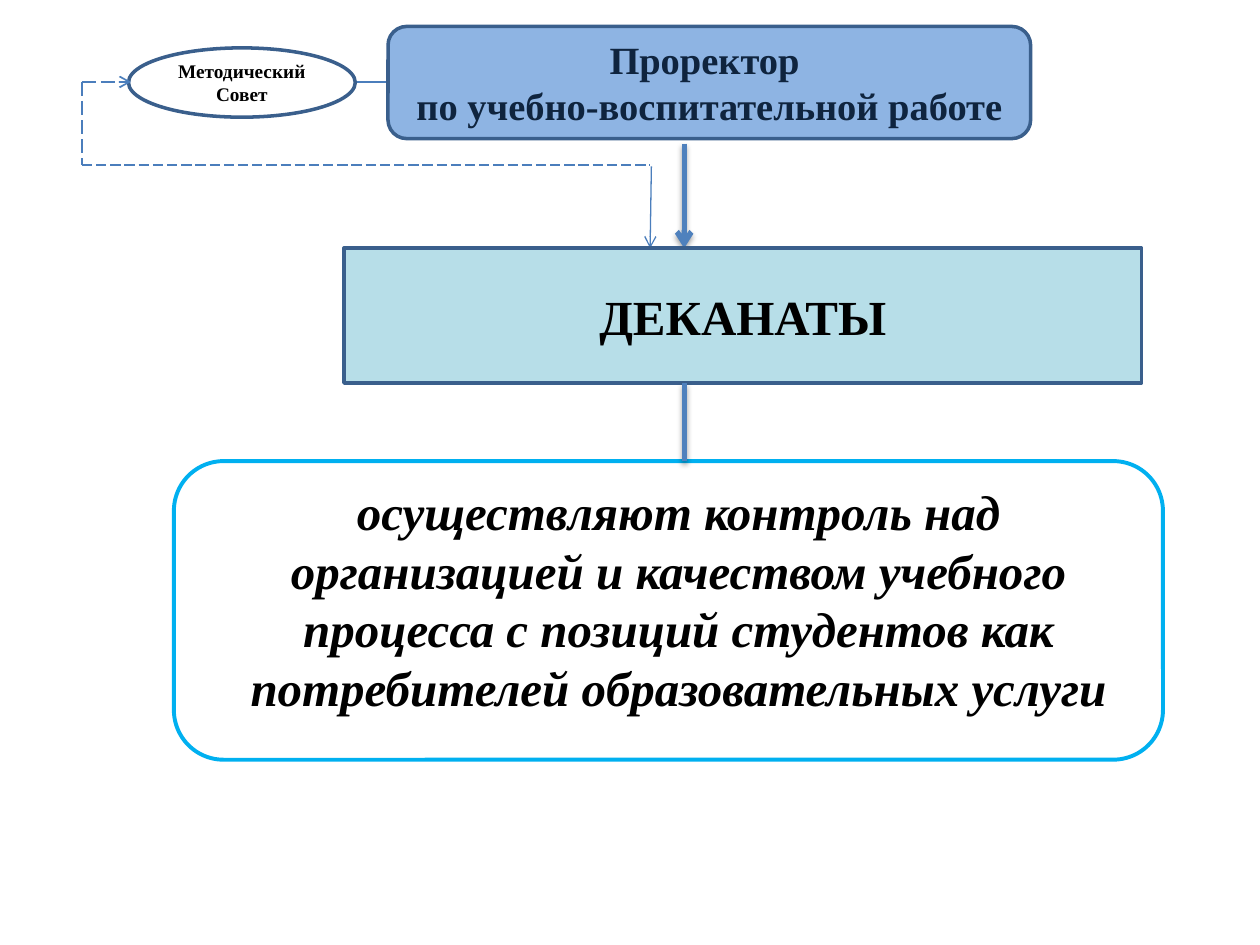
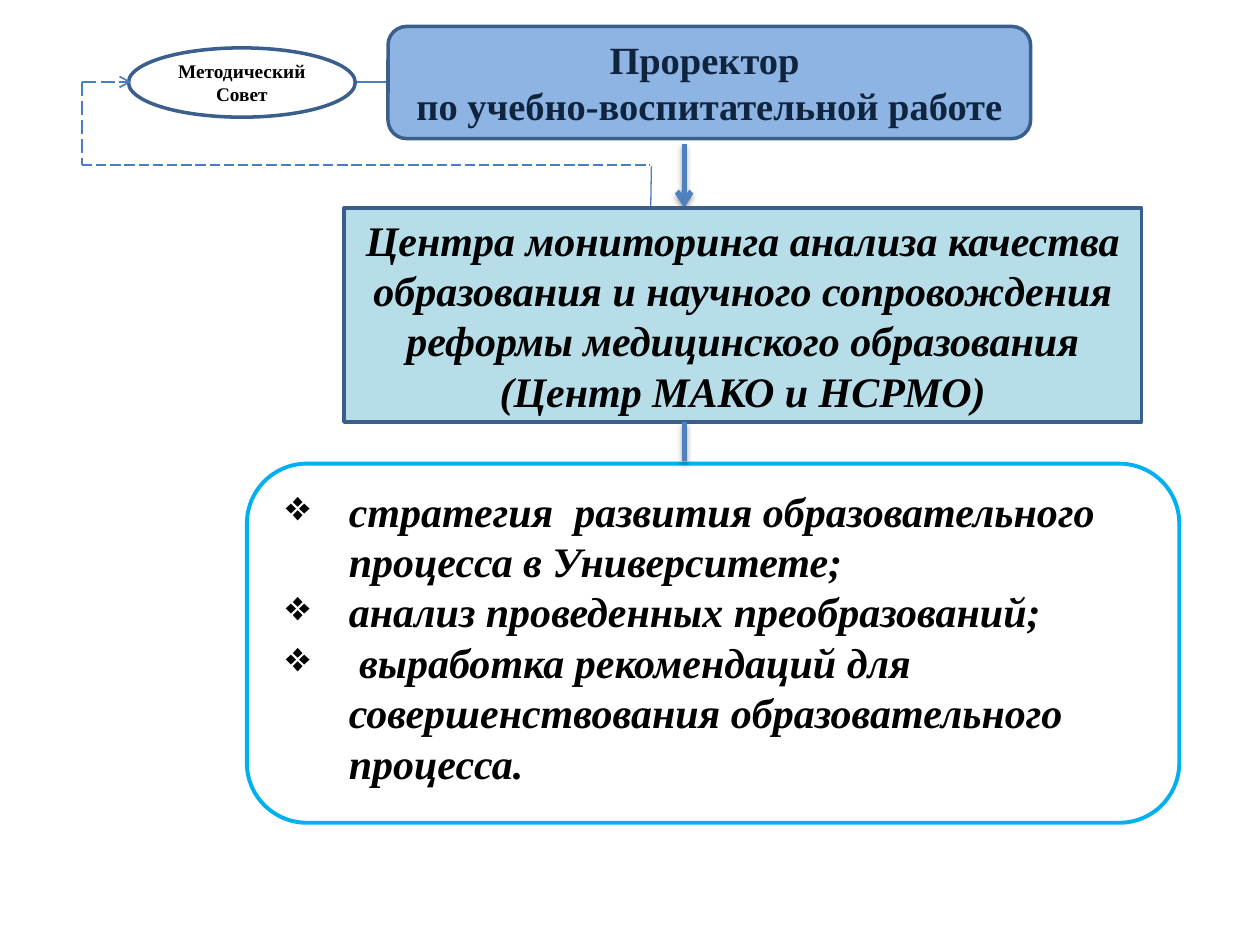
from dataclasses import dataclass
from typing import Optional

import lxml.etree
import pptx
import pptx.dml.color
import pptx.enum.dml
import pptx.enum.shapes
import pptx.enum.text
import pptx.oxml
import pptx.oxml.ns
import pptx.slide
import pptx.text.text
import pptx.util

SLIDE_W, SLIDE_H = pptx.util.Inches(10), pptx.util.Inches(7.5)
COLUMNS, ROWS = 10, 7.5  # square grid cells
FONT = "Times New Roman"
COLORS = {
    "white": "FFFFFF", "black": "000000", "navy": "0F243E",
    "office": "8EB4E3", "unit": "B7DEE8", "border": "3A5F8C",
    "panel": "00B0F0", "thin": "4B7EBC", "thick": "4F81BD",
}
PRESETS = pptx.enum.shapes.MSO_SHAPE
ALIGN = pptx.enum.text.PP_ALIGN
ANCHOR = pptx.enum.text.MSO_ANCHOR

# Positions shared by both slides
COUNCIL_ROW, FEEDBACK_ROW, FEEDBACK_COL = 0.65, 1.31, 0.65
COMMAND_COL, COMMAND_TOP, PANEL_TOP = 5.43, 1.14, 3.66


@dataclass(frozen=True)
class Area:
    col: float
    row: float
    cols: float
    rows: float


@dataclass(frozen=True)
class Copy:
    paragraphs: tuple[str, ...]
    size: float
    color: str = "black"
    italic: bool = False
    bullet: Optional[str] = None


@dataclass(frozen=True)
class Block:
    area: Area
    preset: PRESETS
    fill: Optional[str] = None
    border: str = "border"
    weight: float = 2
    copy: Optional[Copy] = None
    inset: bool = True


@dataclass(frozen=True)
class Link:
    start: tuple[float, float]
    end: tuple[float, float]
    color: str = "thin"
    weight: float = 0.75
    dashed: bool = False
    arrow: bool = False
    shadow: bool = False


@dataclass(frozen=True)
class Department:
    area: Area
    name: Copy
    panel: Area
    duties_area: Area
    duties: Copy


def across(cols: float) -> int:
    return round(SLIDE_W * cols / COLUMNS)


def down(rows: float) -> int:
    return round(SLIDE_H * rows / ROWS)


def place(area: Area) -> tuple[int, int, int, int]:
    return across(area.col), down(area.row), across(area.cols), down(area.rows)


def rgb(name: str) -> pptx.dml.color.RGBColor:
    return pptx.dml.color.RGBColor.from_string(COLORS[name])


def add_element(parent, tag: str, **attributes: str):
    element = lxml.etree.SubElement(parent, pptx.oxml.ns.qn(tag))
    for key, value in attributes.items():
        element.set(key, value)
    return element


def write(frame: pptx.text.text.TextFrame, copy: Copy) -> None:
    frame.word_wrap = True
    for index, line in enumerate(copy.paragraphs):
        paragraph = frame.add_paragraph() if index else frame.paragraphs[0]
        paragraph.alignment = ALIGN.LEFT if copy.bullet else ALIGN.CENTER
        if copy.bullet:
            properties = paragraph._p.get_or_add_pPr()
            hanging = across(0.5)
            properties.set("marL", str(hanging))
            properties.set("indent", str(-hanging))
            add_element(properties, "a:buChar", char=copy.bullet)
        run = paragraph.add_run()
        run.text = line
        run.font.name = FONT
        run.font.size = pptx.util.Pt(copy.size)
        run.font.bold = True
        run.font.italic = copy.italic
        run.font.color.rgb = rgb(copy.color)


def draw_block(slide: pptx.slide.Slide, block: Block) -> None:
    shape = slide.shapes.add_shape(block.preset, *place(block.area))
    shape.shadow.inherit = False
    if block.fill:
        shape.fill.solid()
        shape.fill.fore_color.rgb = rgb(block.fill)
    else:
        shape.fill.background()
    shape.line.color.rgb = rgb(block.border)
    shape.line.width = pptx.util.Pt(block.weight)
    if block.copy:
        frame = shape.text_frame
        frame.vertical_anchor = ANCHOR.MIDDLE
        if not block.inset:
            frame.margin_left = frame.margin_right = 0
            frame.margin_top = frame.margin_bottom = 0
        write(frame, block.copy)


def draw_link(slide: pptx.slide.Slide, link: Link) -> None:
    (x1, y1), (x2, y2) = link.start, link.end
    connector = slide.shapes.add_connector(
        pptx.enum.shapes.MSO_CONNECTOR.STRAIGHT, across(x1), down(y1), across(x2), down(y2))
    connector.line.color.rgb = rgb(link.color)
    connector.line.width = pptx.util.Pt(link.weight)
    if link.dashed:
        connector.line.dash_style = pptx.enum.dml.MSO_LINE.LONG_DASH
    if link.arrow:
        add_element(connector.line._get_or_add_ln(), "a:tailEnd", type="arrow")
    effects = add_element(connector._element.spPr, "a:effectLst")
    if link.shadow:
        shadow = add_element(
            effects, "a:outerShdw", blurRad=str(pptx.util.Pt(3.1)),
            dist=str(pptx.util.Pt(1.8)), dir="5400000", rotWithShape="0")
        shade = add_element(shadow, "a:srgbClr", val=COLORS["black"])
        add_element(shade, "a:alpha", val="35000")


def draw_duties(slide: pptx.slide.Slide, area: Area, duties: Copy) -> None:
    frame = slide.shapes.add_textbox(*place(area)).text_frame
    write(frame, duties)
    frame.auto_size = pptx.enum.text.MSO_AUTO_SIZE.SHAPE_TO_FIT_TEXT


def command(top: float, bottom: float, arrow: bool = False) -> Link:
    return Link((COMMAND_COL, top), (COMMAND_COL, bottom), "thick", 3,
                arrow=arrow, shadow=True)


# Parts common to both slides
COUNCIL_LINK = Link((3.68, COUNCIL_ROW), (1.96, COUNCIL_ROW))
VICE_RECTOR = Block(
    Area(3.08, 0.21, 5.1, 0.89), PRESETS.FLOWCHART_ALTERNATE_PROCESS, "office",
    copy=Copy(("Проректор ", "по учебно-воспитательной работе"), 22, "navy"))
COUNCIL = Block(Area(1.02, 0.38, 1.8, 0.55), PRESETS.OVAL, "white",
                copy=Copy(("Методический Совет",), 11))
FEEDBACK = (
    Link((FEEDBACK_COL, COUNCIL_ROW), (1.04, COUNCIL_ROW), weight=1, dashed=True, arrow=True),
    Link((FEEDBACK_COL, COUNCIL_ROW), (FEEDBACK_COL, FEEDBACK_ROW), weight=1, dashed=True),
    Link((FEEDBACK_COL, FEEDBACK_ROW), (5.16, FEEDBACK_ROW), dashed=True),
    Link((5.17, 1.32), (5.16, 1.97), arrow=True),
)

# One department for each slide
DEPARTMENTS = (
    Department(
        Area(2.73, 1.97, 6.33, 1.07), Copy(("ДЕКАНАТЫ",), 28),
        Area(1.38, 3.66, 7.85, 2.37), Area(1.55, 3.77, 7.67, 1.99),
        Copy(("осуществляют контроль над организацией и качеством учебного процесса "
              "с позиций студентов как потребителей образовательных услуги",),
             28, italic=True)),
    Department(
        Area(2.73, 1.65, 6.33, 1.7),
        Copy(("Центра мониторинга анализа качества образования и научного сопровождения "
              "реформы медицинского образования (Центр МАКО и НСРМО)",), 24, italic=True),
        Area(1.96, 3.68, 7.4, 2.85), Area(2.17, 3.8, 7.67, 2.52),
        Copy(("стратегия  развития образовательного процесса в Университете;",
              "анализ проведенных преобразований;",
              " выработка рекомендаций для совершенствования образовательного процесса."),
             24, italic=True, bullet="❖")),
)


def draw_department(slide: pptx.slide.Slide, department: Department) -> None:
    area = department.area
    # Management and feedback loop
    draw_link(slide, COUNCIL_LINK)
    draw_block(slide, VICE_RECTOR)
    draw_block(slide, COUNCIL)
    draw_link(slide, command(COMMAND_TOP, area.row, arrow=True))
    for link in FEEDBACK:
        draw_link(slide, link)
    # Duties panel
    draw_block(slide, Block(department.panel, PRESETS.ROUNDED_RECTANGLE,
                            border="panel", weight=2.25))
    draw_duties(slide, department.duties_area, department.duties)
    # Department and its link to the duties
    draw_block(slide, Block(area, PRESETS.RECTANGLE, "unit",
                            copy=department.name, inset=False))
    draw_link(slide, command(area.row + area.rows, PANEL_TOP))


def main() -> None:
    deck = pptx.Presentation()
    deck.slide_width, deck.slide_height = SLIDE_W, SLIDE_H
    blank = deck.slide_layouts.get_by_name("Blank")
    for department in DEPARTMENTS:
        draw_department(deck.slides.add_slide(blank), department)
    deck.save("out.pptx")


if __name__ == "__main__":
    main()
